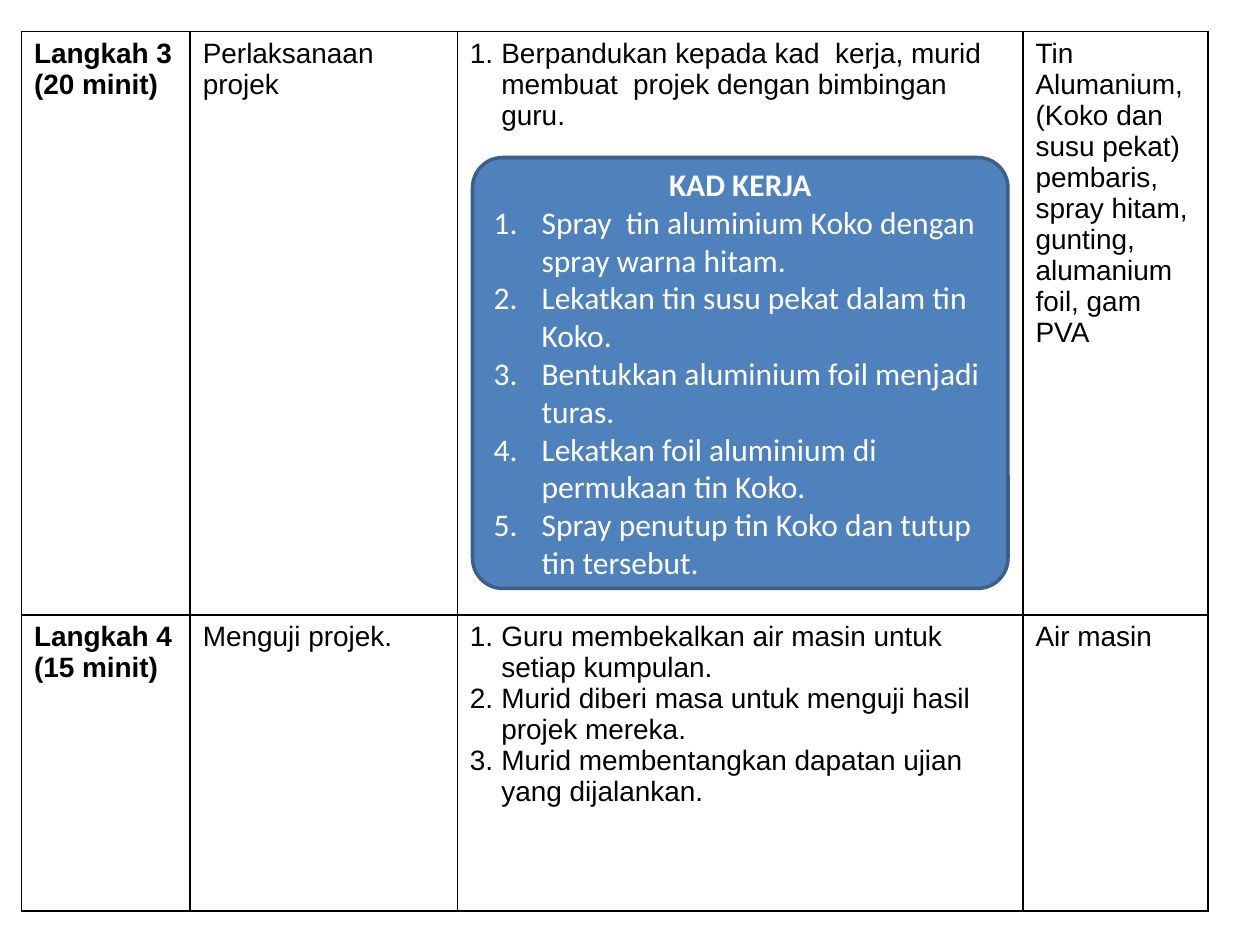
from pptx import Presentation as Deck
from pptx.dml.color import RGBColor as Rgb
from pptx.enum.shapes import MSO_SHAPE as Kind
from pptx.enum.text import MSO_ANCHOR as Anchor, PP_ALIGN as Align
from pptx.util import Inches, Pt
from lxml.etree import SubElement as Sub
from pptx.oxml.ns import qn


def color(code):
    return Rgb.from_string(code)


class Page:
    cell = {"name": "Arial", "size": Pt(16), "bold": False}
    head = {**cell, "bold": True}
    card = {"name": "Calibri", "size": Pt(18), "bold": False}
    title = {**card, "bold": True}
    ink, paper, blue, edge = "000000", "FFFFFF", "4F81BD", "3A5F8C"

    def __init__(self, deck):
        self.slide = deck.slides.add_slide(deck.slide_layouts[6])

    def text(self, frame, lines, form, tone, hang=0, new=False):
        for i, line in enumerate(lines):
            para = frame.add_paragraph() if new or i else frame.paragraphs[0]
            para.alignment = Align.LEFT
            run = para.add_run()
            run.text = line
            for key, value in form.items():
                setattr(run.font, key, value)
            run.font.color.rgb = color(tone)
            if hang:
                self.number(para, hang)

    def number(self, para, hang):
        props = para._p.get_or_add_pPr()
        props.set("marL", str(Inches(hang)))
        props.set("indent", str(-Inches(hang)))
        Sub(props, qn("a:buFont"), typeface="+mj-lt")
        Sub(props, qn("a:buAutoNum"), type="arabicPeriod")

    def border(self, cell):
        props = cell._tc.get_or_add_tcPr()
        for side in ("lnL", "lnR", "lnT", "lnB"):
            line = Sub(props, qn("a:" + side), w=str(Pt(1)))
            fill = Sub(line, qn("a:solidFill"))
            Sub(fill, qn("a:srgbClr"), val=self.ink)

    def table(self, left, top, cols, rows, data):
        grid = self.slide.shapes.add_table(
            len(rows), len(cols), Inches(left), Inches(top),
            Inches(sum(cols)), Inches(sum(rows))).table
        grid.first_row = grid.horz_banding = False
        for col, width in zip(grid.columns, cols):
            col.width = Inches(width)
        for r, (high, texts) in enumerate(zip(rows, data)):
            grid.rows[r].height = Inches(high)
            for c, lines in enumerate(texts):
                cell = grid.cell(r, c)
                self.border(cell)
                cell.fill.background()
                form = self.cell if c else self.head
                hang = 0.25 if c == 2 else 0
                self.text(cell.text_frame, lines, form, self.ink, hang)

    def panel(self, left, top, width, high, name, steps):
        box = self.slide.shapes.add_shape(
            Kind.ROUNDED_RECTANGLE, Inches(left), Inches(top),
            Inches(width), Inches(high))
        box.adjustments[0] = 0.07
        box.shadow.inherit = False
        box.fill.solid()
        box.fill.fore_color.rgb = color(self.blue)
        box.line.color.rgb = color(self.edge)
        box.line.width = Pt(2)
        frame = box.text_frame
        frame.word_wrap = True
        frame.vertical_anchor = Anchor.MIDDLE
        self.text(frame, [name], self.title, self.paper)
        frame.paragraphs[0].alignment = Align.CENTER
        self.text(frame, steps, self.card, self.paper, 0.38, True)


def main():
    deck = Deck()
    deck.slide_width, deck.slide_height = Inches(10), Inches(7.5)
    page = Page(deck)
    page.table(0.17, 0.25, [1.34, 2.12, 4.49, 1.47], [4.63, 2.35], [
        [["Langkah 3", "(20 minit)"],
         ["Perlaksanaan projek"],
         ["Berpandukan kepada kad  kerja, murid membuat  projek "
          "dengan bimbingan guru."],
         ["Tin Alumanium, (Koko dan susu pekat) pembaris, spray hitam, "
          "gunting, alumanium foil, gam PVA"]],
        [["Langkah 4", "(15 minit)"],
         ["Menguji projek."],
         ["Guru membekalkan air masin untuk setiap kumpulan.",
          "Murid diberi masa untuk menguji hasil projek mereka.",
          "Murid membentangkan dapatan ujian yang dijalankan."],
         ["Air masin"]],
    ])
    page.panel(3.75, 1.25, 4.25, 3.42, "KAD KERJA", [
        "Spray  tin aluminium Koko dengan spray warna hitam.",
        "Lekatkan tin susu pekat dalam tin Koko.",
        "Bentukkan aluminium foil menjadi turas.",
        "Lekatkan foil aluminium di permukaan tin Koko.",
        "Spray penutup tin Koko dan tutup tin tersebut.",
    ])
    deck.save("out.pptx")


if __name__ == "__main__":
    main()
